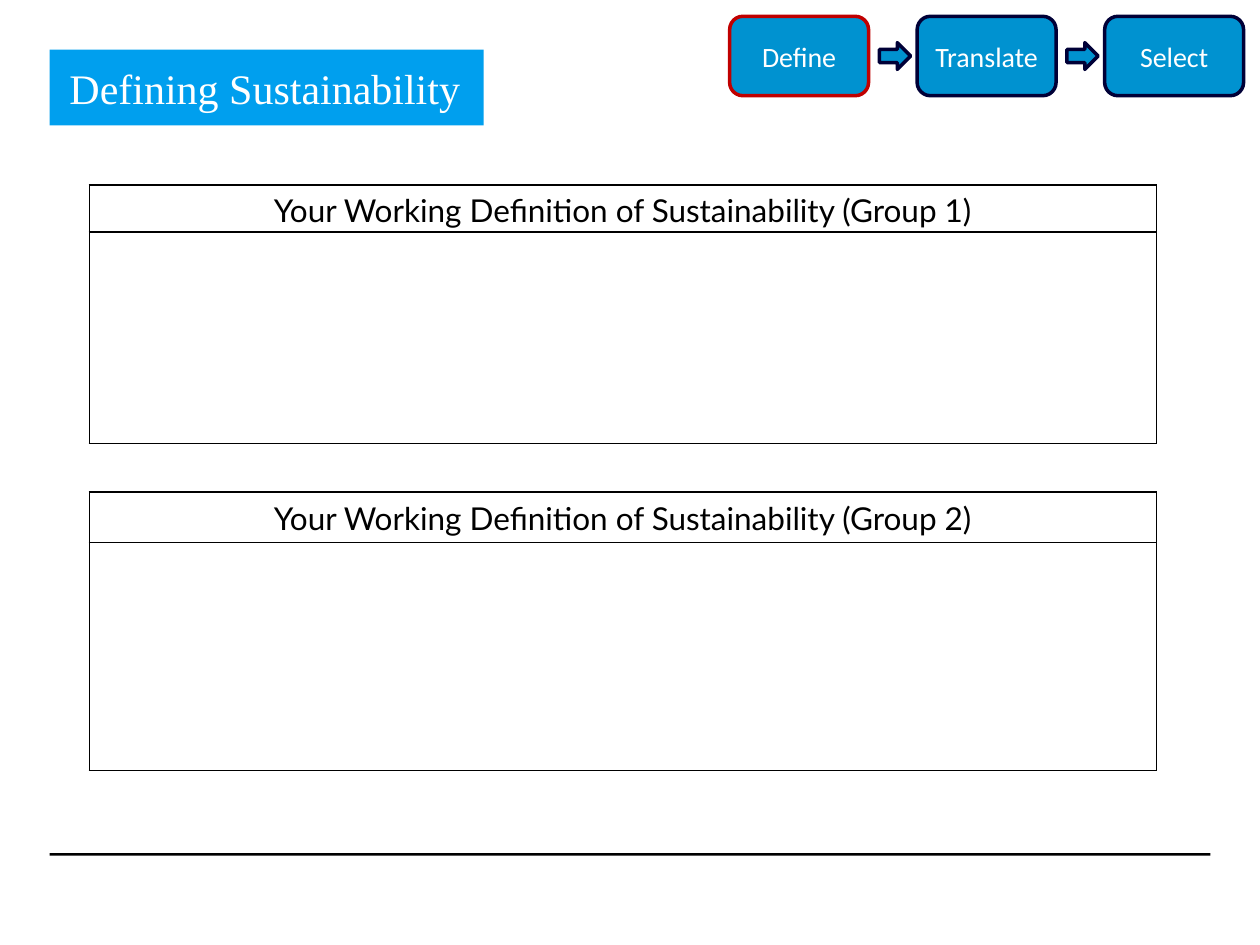
import pptx
import pptx.dml.color
import pptx.enum.shapes
import pptx.enum.text
import pptx.oxml
import pptx.oxml.ns
import pptx.util
from pptx.util import Cm

ALIGN = pptx.enum.text.PP_ALIGN
ANCHOR = pptx.enum.text.MSO_ANCHOR
SHAPE = pptx.enum.shapes.MSO_SHAPE


def color(value):
    return pptx.dml.color.RGBColor.from_string(value)


def write(frame, text, font="Calibri", size=16, fill="FFFFFF",
          align=ALIGN.CENTER, spacing=1.0):
    paragraph = frame.paragraphs[0]
    paragraph.alignment = align
    paragraph.line_spacing = spacing
    run = paragraph.add_run()
    run.text = text
    run.font.name = font
    run.font.size = pptx.util.Pt(size)
    run.font.bold = False
    run.font.color.rgb = color(fill)


class SlideBuilder:
    title_fill = "009FEE"
    step_fill = "0092D0"
    step_line = "000037"
    active_line = "C00000"
    ink = "000000"

    def __init__(self, presentation):
        self.slide = presentation.slides.add_slide(presentation.slide_layouts[5])

    def title(self, text, left, top, width, height):
        title = self.slide.shapes.title
        title.left, title.top = Cm(left), Cm(top)
        title.width, title.height = Cm(width), Cm(height)
        title.fill.solid()
        title.fill.fore_color.rgb = color(self.title_fill)
        frame = title.text_frame
        frame.auto_size = pptx.enum.text.MSO_AUTO_SIZE.NONE
        frame.word_wrap = False
        frame.vertical_anchor = ANCHOR.MIDDLE
        frame.margin_left = frame.margin_right = Cm(0.4)
        frame.margin_top = frame.margin_bottom = Cm(0.2)
        write(frame, text, font="Times New Roman", size=24, align=ALIGN.LEFT)

    def shape(self, kind, left, top, width, height, fill, line=None):
        shape = self.slide.shapes.add_shape(
            kind, Cm(left), Cm(top), Cm(width), Cm(height))
        shape.shadow.inherit = False
        shape.fill.solid()
        shape.fill.fore_color.rgb = color(fill)
        if line:
            shape.line.color.rgb = color(line)
            shape.line.width = pptx.util.Pt(2)
        else:
            shape.line.fill.background()
        return shape

    def step(self, text, left, active):
        line = self.active_line if active else self.step_line
        shape = self.shape(SHAPE.ROUNDED_RECTANGLE, left, 0.33, 2.8, 1.6,
                           self.step_fill, line)
        frame = shape.text_frame
        frame.margin_left = frame.margin_right = Cm(0.1)
        frame.vertical_anchor = ANCHOR.MIDDLE
        write(frame, text)

    def arrow(self, left):
        self.shape(SHAPE.RIGHT_ARROW, left, 0.86, 0.63, 0.54,
                   self.step_fill, self.step_line)

    def rule(self, left, top, width):
        self.shape(SHAPE.RECTANGLE, left, top, width, 0.05, self.ink)

    def border(self, cell):
        properties = cell._tc.get_or_add_tcPr()
        for side in ("L", "R", "T", "B"):
            properties.append(pptx.oxml.parse_xml(
                f'<a:ln{side} {pptx.oxml.ns.nsdecls("a")} w="12700">'
                f'<a:solidFill><a:srgbClr val="{self.ink}"/></a:solidFill>'
                f'</a:ln{side}>'))

    def definition_table(self, heading, top, row_heights):
        table = self.slide.shapes.add_table(
            2, 1, Cm(1.8), Cm(top), Cm(21.51), Cm(sum(row_heights))).table
        table.first_row = False
        table.horz_banding = False
        for row, height in zip(table.rows, row_heights):
            row.height = Cm(height)
            cell = row.cells[0]
            self.border(cell)
            cell.fill.background()
        header = table.cell(0, 0)
        header.vertical_anchor = ANCHOR.MIDDLE
        header.margin_left = header.margin_right = Cm(0.18)
        header.margin_top = header.margin_bottom = 0
        write(header.text_frame, heading, font="Lato", size=18,
              fill=self.ink, spacing=1.07)


def main():
    presentation = pptx.Presentation()
    presentation.slide_width = Cm(25.4)
    presentation.slide_height = Cm(19.05)
    builder = SlideBuilder(presentation)

    builder.rule(1, 17.2, 23.4)
    builder.title("Defining Sustainability", 1, 1, 8.75, 1.53)

    tables = [(3.73, (0.95, 4.26)), (9.92, (1.02, 4.59))]
    for group, (top, row_heights) in enumerate(tables, start=1):
        builder.definition_table(
            f"Your Working Definition of Sustainability (Group {group})",
            top, row_heights)

    first_left, pitch = 14.71, 3.78
    steps = ["Define", "Translate", "Select"]
    for index, text in enumerate(steps):
        left = first_left + index * pitch
        builder.step(text, left, active=index == 0)
        if index < len(steps) - 1:
            builder.arrow(left + 3.02)

    presentation.save("out.pptx")


if __name__ == "__main__":
    main()
